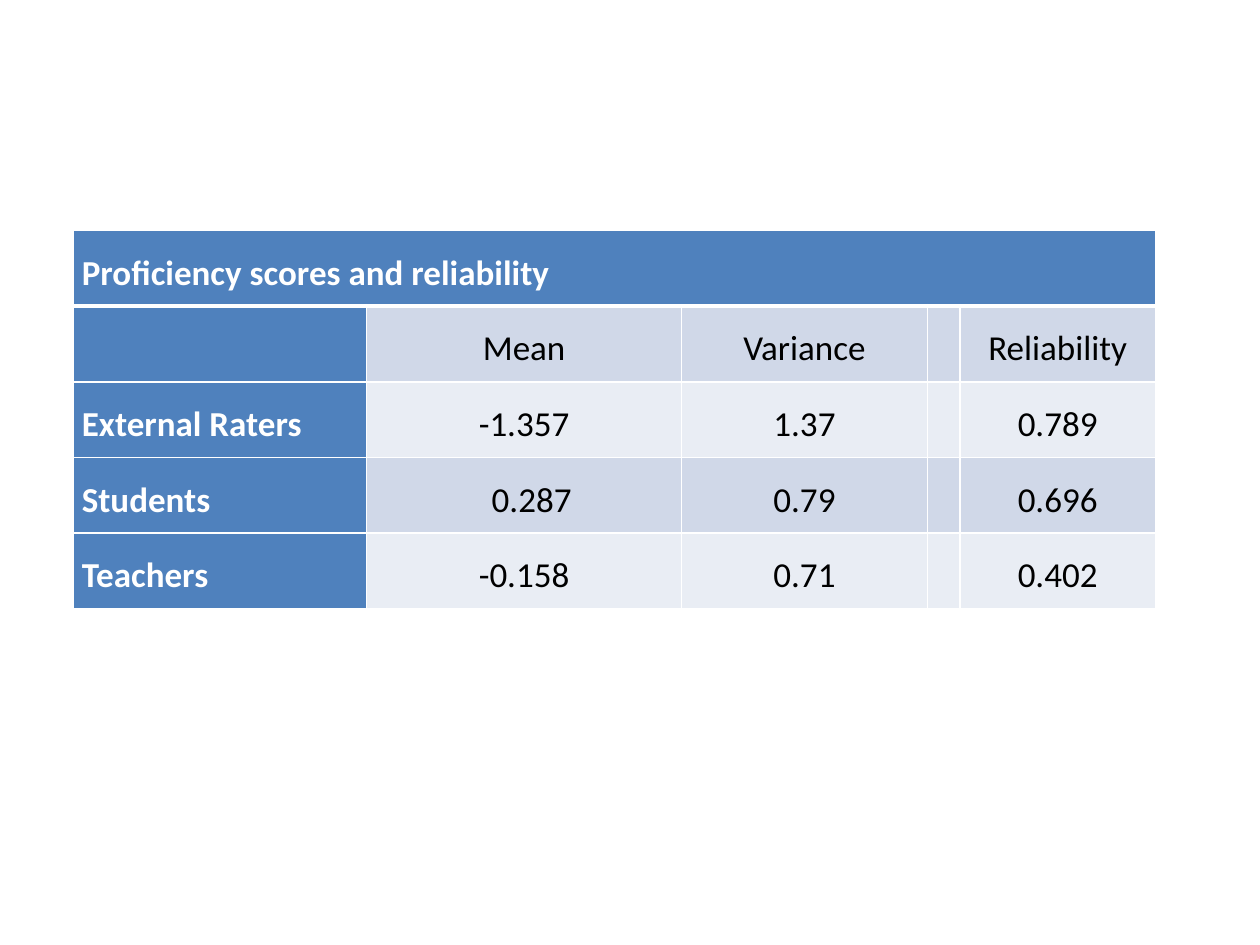
from lxml import etree
from pptx import Presentation
from pptx.dml.color import RGBColor
from pptx.enum import text
from pptx.oxml import ns
from pptx.util import Inches, Pt

HEADING = "Proficiency scores and reliability"
SCORES = [
    ("", "Mean", "Variance", "", "Reliability"),
    ("External Raters", "-1.357", "1.37", "", "0.789"),
    ("Students", "0.287", "0.79", "", "0.696"),
    ("Teachers", "-0.158", "0.71", "", "0.402"),
]
COLUMN_WIDTHS = [2.33, 2.5, 1.95, 0.26, 1.55]
ROW_HEIGHT = 0.6
LEFT, TOP = 0.58, 1.83
SIDE_MARGIN = 0.07
SIGN_INDENT = 0.12  # lines up the unsigned mean with the negative ones

BLUE = RGBColor(0x4F, 0x81, 0xBD)
BANDS = [RGBColor(0xE9, 0xED, 0xF4), RGBColor(0xD0, 0xD8, 0xE8)]
WHITE = RGBColor(0xFF, 0xFF, 0xFF)
BLACK = RGBColor(0, 0, 0)


def add_borders(cell, **widths):
    """Draw white lines on the sides L, R, T and B, with widths in points."""
    properties = cell._tc.get_or_add_tcPr()
    for side in "LRTB":
        line = etree.SubElement(properties, ns.qn(f"a:ln{side}"),
                                w=str(Pt(widths.get(side, 1))))
        fill = etree.SubElement(line, ns.qn("a:solidFill"))
        etree.SubElement(fill, ns.qn("a:srgbClr"), val=str(WHITE))


def format_cell(cell, content, row, column):
    is_header = row == 0 or column == 0
    add_borders(cell, T=3 if row == 1 else 1, B=3 if row == 0 else 1)
    cell.fill.solid()
    cell.fill.fore_color.rgb = BLUE if is_header else BANDS[row % 2]
    cell.margin_left = cell.margin_right = Inches(SIDE_MARGIN)
    cell.margin_top = cell.margin_bottom = 0
    if column == 1 and content[:1].isdigit():
        cell.margin_left = Inches(SIDE_MARGIN + SIGN_INDENT)

    cell.text = content
    paragraph = cell.text_frame.paragraphs[0]
    paragraph.line_spacing = 1.5
    if not is_header:
        paragraph.alignment = text.PP_ALIGN.CENTER
    paragraph.font.name = "Calibri"
    paragraph.font.size = Pt(20)
    paragraph.font.bold = is_header
    paragraph.font.color.rgb = WHITE if is_header else BLACK


def main():
    presentation = Presentation()
    presentation.slide_width, presentation.slide_height = Inches(10), Inches(7.5)
    slide = presentation.slides.add_slide(presentation.slide_layouts[6])

    rows = [(HEADING, "", "", "", "")] + SCORES
    scores = slide.shapes.add_table(
        len(rows), len(COLUMN_WIDTHS), Inches(LEFT), Inches(TOP),
        Inches(sum(COLUMN_WIDTHS)), Inches(ROW_HEIGHT * len(rows))).table
    scores.first_col = True
    for column, width in zip(scores.columns, COLUMN_WIDTHS):
        column.width = Inches(width)
    for r, contents in enumerate(rows):
        scores.rows[r].height = Inches(ROW_HEIGHT)
        for c, content in enumerate(contents):
            format_cell(scores.cell(r, c), content, r, c)
    scores.cell(0, 0).merge(scores.cell(0, len(COLUMN_WIDTHS) - 1))

    presentation.save("out.pptx")


if __name__ == "__main__":
    main()
